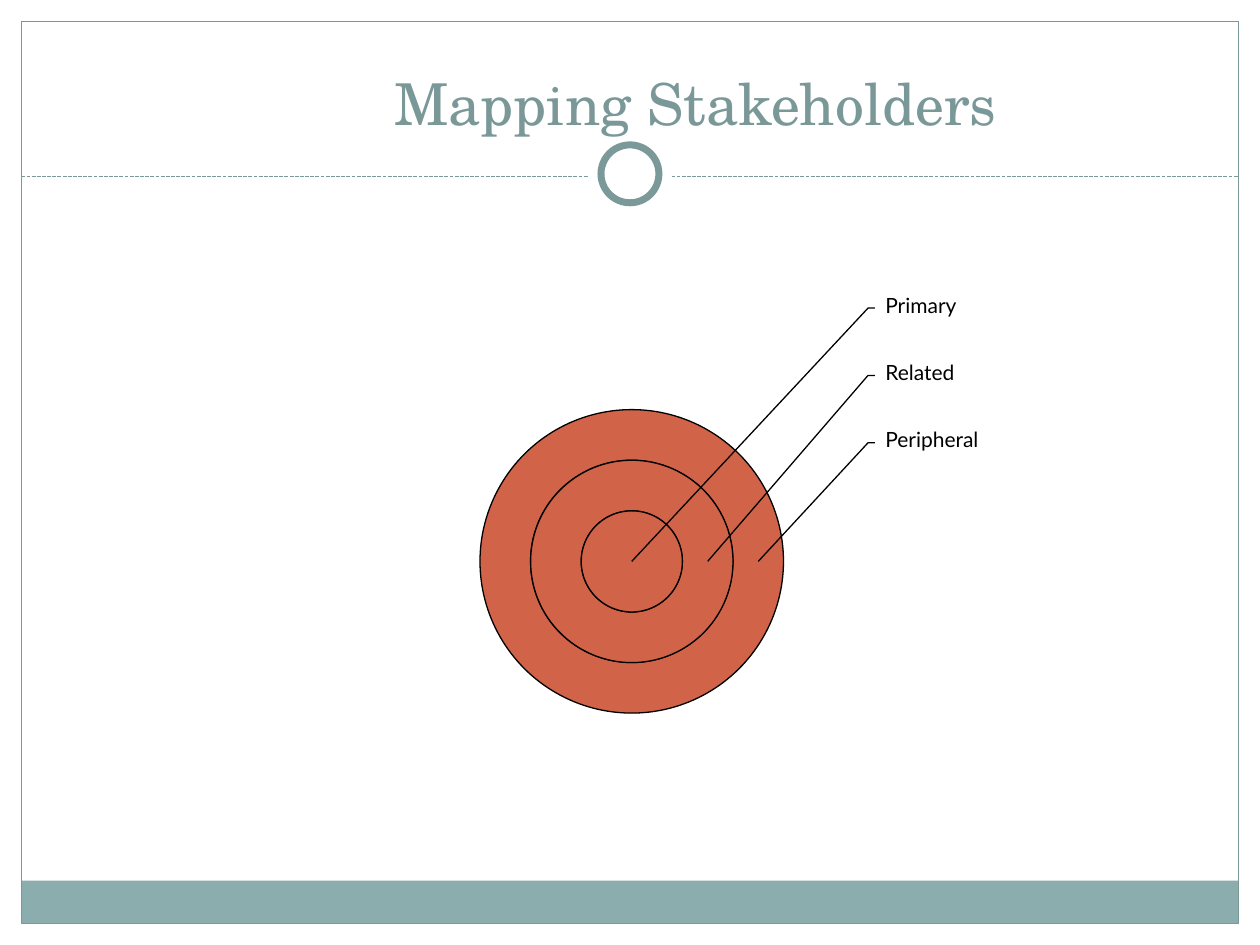
from lxml.etree import SubElement
from pptx import Presentation
from pptx.dml.color import RGBColor
from pptx.enum.dml import MSO_LINE
from pptx.enum.shapes import MSO_CONNECTOR, MSO_SHAPE
from pptx.enum.text import MSO_ANCHOR, PP_ALIGN
from pptx.oxml.ns import qn
from pptx.util import Inches, Pt

COLORS = {"paper": "FFFFFF", "band": "8CADAE", "frame": "7C999A",
          "title": "7B9899", "ring": "D16349", "ink": "000000"}
COLUMNS, ROWS = 100, 75
CELL = Inches(0.1)


def grid(*lengths):
    """Turn grid columns or rows into slide lengths."""
    return [round(length * CELL) for length in lengths]


def color(name):
    """Look up a named colour."""
    return RGBColor.from_string(COLORS[name])


def add_part(page, kind, box, fill=None, line=None, width=0.75):
    """Place a flat preset shape in a grid box."""
    shape = page.shapes.add_shape(kind, *grid(*box))
    shape.shadow.inherit = False
    if fill:
        shape.fill.solid()
        shape.fill.fore_color.rgb = color(fill)
    else:
        shape.fill.background()
    if line:
        shape.line.color.rgb = color(line)
        shape.line.width = Pt(width)
    else:
        shape.line.fill.background()
    return shape


def set_text(shape, text, font, size, ink, align):
    """Write one styled paragraph into a shape."""
    para = shape.text_frame.paragraphs[0]
    para.text = text
    para.alignment = align
    para.font.name = font
    para.font.size = Pt(size)
    para.font.color.rgb = color(ink)


def circle_box(center_x, center_y, radius):
    """Give the grid box around a circle."""
    return center_x - radius, center_y - radius, 2 * radius, 2 * radius


def draw_backdrop(page, box, margin=1.7, header=15.2, footer=3.4):
    """Draw the white margins, the footer band and the frame."""
    left, top, width, height = box
    inner = width - 2 * margin
    bottom = top + height - margin
    for part in ((left, top, width, header),
                 (left, top, margin, height),
                 (left + width - margin, top, margin, height)):
        add_part(page, MSO_SHAPE.RECTANGLE, part, "paper")
    add_part(page, MSO_SHAPE.RECTANGLE,
             (left + margin, bottom - footer, inner, footer), "band")
    add_part(page, MSO_SHAPE.RECTANGLE,
             (left + margin, top + margin, inner, height - 2 * margin), line="frame")


def draw_header(page, box):
    """Draw the dashed rule, its ring and the title above it."""
    left, top, width, height = box
    middle, rule = left + width / 2, top + height
    line = page.shapes.add_connector(
        MSO_CONNECTOR.STRAIGHT, *grid(left, rule, left + width, rule))
    line.line.color.rgb = color("frame")
    line.line.width = Pt(0.75)
    line.line.dash_style = MSO_LINE.SQUARE_DOT
    SubElement(line._element.spPr, qn("a:effectLst"))
    center = rule - 0.2
    add_part(page, MSO_SHAPE.OVAL, circle_box(middle, center, 3.35), "paper")
    add_part(page, MSO_SHAPE.OVAL, circle_box(middle, center, 2.3), "paper", "frame", 4)
    title = page.shapes.add_textbox(
        *grid(left + 10.9, top + 0.6, width - 11.4, height - 3.2))
    title.text_frame.word_wrap = True
    title.text_frame.vertical_anchor = MSO_ANCHOR.BOTTOM
    set_text(title, "Mapping Stakeholders", "TeX Gyre Schola", 33, "title", PP_ALIGN.CENTER)


def draw_callout(page, box, target, text):
    """Draw a label with a bent leader that ends at the target."""
    left, top, width, height = box
    label = add_part(page, MSO_SHAPE.LINE_CALLOUT_2_NO_BORDER, box, line="ink")
    bends = (0.235, -0.13, 0.235, -0.214,
             (target[1] - top) / height, (target[0] - left) / width)
    for index, bend in enumerate(bends):
        label.adjustments[index] = bend
    frame = label.text_frame
    frame.margin_left = frame.margin_right = frame.margin_top = frame.margin_bottom = 0
    frame.word_wrap = False
    frame.vertical_anchor = MSO_ANCHOR.TOP
    set_text(label, text, "Lato", 12, "ink", PP_ALIGN.LEFT)


def draw_target(page, box, names):
    """Draw concentric rings, outermost first, each with a callout."""
    left, top, width, height = box
    count = len(names)
    step = width * 0.104
    center_x, center_y = left + count * step, top + height - count * step
    label_width, label_height = width / 6, height * 0.16
    for level in range(count, 0, -1):
        radius = level * step
        kind = MSO_SHAPE.DONUT if level > 1 else MSO_SHAPE.OVAL
        ring = add_part(page, kind, circle_box(center_x, center_y, radius), "ring", "ink")
        if level > 1:
            ring.adjustments[0] = step / (2 * radius)
        reach = radius - step / 2 if level > 1 else 0
        label = (left + width - label_width, top + (level - 1) * label_height,
                 label_width, label_height)
        draw_callout(page, label, (center_x + reach, center_y), names[level - 1])


def main():
    """Build the deck with its one slide."""
    deck = Presentation()
    deck.slide_width, deck.slide_height = grid(COLUMNS, ROWS)
    page = deck.slides.add_slide(deck.slide_layouts[6])
    draw_backdrop(page, (0, 0, COLUMNS, ROWS))
    draw_header(page, (1.7, 1.7, 96.6, 12.3))
    draw_target(page, (38.1, 23.2, 38.6, 33.4), ("Primary", "Related", "Peripheral"))
    deck.save("out.pptx")


if __name__ == "__main__":
    main()
